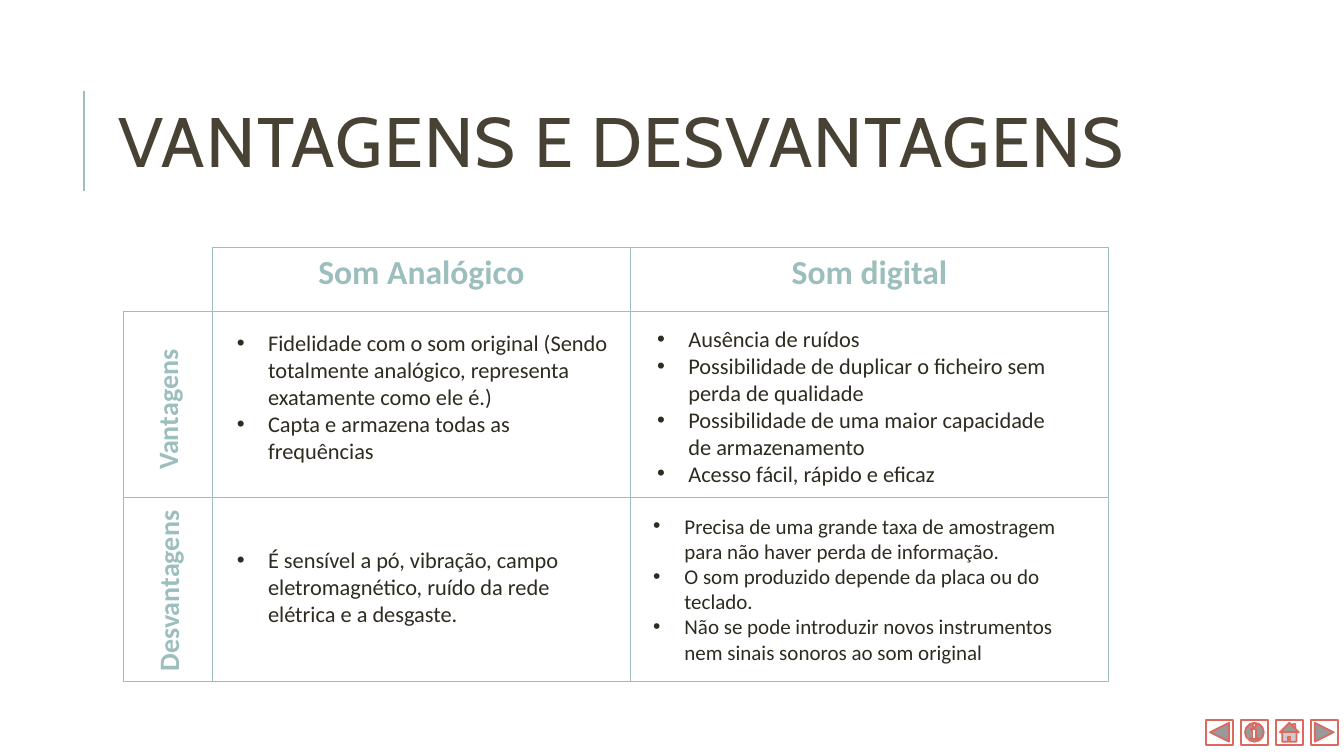
from dataclasses import dataclass

from lxml import etree
from pptx import Presentation
from pptx.dml.color import RGBColor
from pptx.enum.shapes import MSO_CONNECTOR, MSO_SHAPE
from pptx.enum.text import MSO_ANCHOR, MSO_AUTO_SIZE, PP_ALIGN
from pptx.oxml.ns import qn
from pptx.slide import Slide
from pptx.table import Table
from pptx.text.text import TextFrame
from pptx.util import Inches, Length, Pt

STRAIGHT = MSO_CONNECTOR.STRAIGHT
LEFT, CENTER = PP_ALIGN.LEFT, PP_ALIGN.CENTER
TOP, MIDDLE = MSO_ANCHOR.TOP, MSO_ANCHOR.MIDDLE
FIT_SHAPE, FIXED = MSO_AUTO_SIZE.SHAPE_TO_FIT_TEXT, MSO_AUTO_SIZE.NONE
BUTTONS = (
    MSO_SHAPE.ACTION_BUTTON_BACK_OR_PREVIOUS,
    MSO_SHAPE.ACTION_BUTTON_INFORMATION,
    MSO_SHAPE.ACTION_BUTTON_HOME,
    MSO_SHAPE.ACTION_BUTTON_FORWARD_OR_NEXT,
)

TEAL = RGBColor(0x9C, 0xBE, 0xBD)
BROWN = RGBColor(0x47, 0x42, 0x33)
INK = RGBColor(0x2E, 0x2B, 0x21)
CORAL = RGBColor(0xDB, 0x69, 0x5F)
WHITE = RGBColor(0xFF, 0xFF, 0xFF)

SLIDE_WIDTH, SLIDE_HEIGHT = Inches(13.33), Inches(7.5)
BULLET_INDENT = Inches(0.31)

# Grid edges, in percent of the slide's width and height
COLUMN_EDGES = (9.15, 15.83, 46.89, 82.5)
ROW_EDGES = (32.8, 41.2, 65.75, 90.2)


@dataclass(frozen=True)
class Area:
    """Place and size in percent of the slide."""
    left: float
    top: float
    width: float
    height: float

    def lengths(self) -> tuple[Length, Length, Length, Length]:
        return (across(self.left), down(self.top),
                across(self.width), down(self.height))


@dataclass(frozen=True)
class SideLabel:
    text: str
    area: Area


@dataclass(frozen=True)
class BulletList:
    area: Area
    size: int
    items: tuple[str, ...]


HEADERS = ("Som Analógico", "Som digital")
SIDE_LABELS = (
    SideLabel("Vantagens", Area(6, 49.07, 12.9, 5.87)),
    SideLabel("Desvantagens", Area(5.55, 74.8, 13.95, 5.87)),
)
BULLET_LISTS = (
    BulletList(Area(16.88, 42.93, 30, 19.33), 16, (
        "Fidelidade com o som original (Sendo totalmente analógico, "
        "representa exatamente como ele é.)",
        "Capta e armazena todas as frequências",
    )),
    BulletList(Area(48.16, 42.4, 30.68, 22.93), 16, (
        "Ausência de ruídos",
        "Possibilidade de duplicar o ficheiro sem perda de qualidade",
        "Possibilidade de uma maior capacidade de armazenamento",
        "Acesso fácil, rápido e eficaz",
    )),
    BulletList(Area(16.88, 71.6, 30, 12.13), 16, (
        "É sensível a pó, vibração, campo eletromagnético, "
        "ruído da rede elétrica e a desgaste.",
    )),
    BulletList(Area(47.86, 67.2, 33.46, 21.6), 15, (
        "Precisa de uma grande taxa de amostragem para não haver "
        "perda de informação.",
        "O som produzido depende da placa ou do teclado.",
        "Não se pode introduzir novos instrumentos nem sinais sonoros "
        "ao som original",
    )),
)


def across(share: float) -> Length:
    return Length(round(SLIDE_WIDTH * share / 100))


def down(share: float) -> Length:
    return Length(round(SLIDE_HEIGHT * share / 100))


def write(frame: TextFrame, *lines: str, size: float, color: RGBColor,
          font: str = "Calibri", bold: bool = False, align: PP_ALIGN = LEFT,
          line_spacing: float = 1.0, tracking: float = 0,
          bullets: bool = False) -> None:
    for index, line in enumerate(lines):
        para = frame.add_paragraph() if index else frame.paragraphs[0]
        para.alignment = align
        para.line_spacing = line_spacing
        span = para.add_run()
        span.text = line
        span.font.name, span.font.size = font, Pt(size)
        span.font.bold, span.font.color.rgb = bold, color
        if tracking:
            span.font._element.set("spc", str(round(tracking * 100)))
        if bullets:
            properties = para._p.get_or_add_pPr()
            properties.set("marL", str(BULLET_INDENT))
            properties.set("indent", str(-BULLET_INDENT))
            etree.SubElement(properties, qn("a:buFont"), typeface="Arial")
            etree.SubElement(properties, qn("a:buChar"), char="•")


def add_box(page: Slide, area: Area, anchor: MSO_ANCHOR = TOP,
            fit: MSO_AUTO_SIZE = FIT_SHAPE, rotation: float = 0) -> TextFrame:
    box = page.shapes.add_textbox(*area.lengths())
    box.rotation = rotation
    frame = box.text_frame
    frame.word_wrap = True
    frame.auto_size = fit
    frame.vertical_anchor = anchor
    return frame


def add_grid(page: Slide, column_edges: tuple[float, ...],
             row_edges: tuple[float, ...]) -> Table:
    """Add an unfilled table with thin teal rules between the given edges."""
    widths = [end - start for start, end in zip(column_edges, column_edges[1:])]
    heights = [end - start for start, end in zip(row_edges, row_edges[1:])]
    area = Area(column_edges[0], row_edges[0], sum(widths), sum(heights))
    table = page.shapes.add_table(len(heights), len(widths),
                                  *area.lengths()).table
    table.first_row = table.horz_banding = False
    for column, width in zip(table.columns, widths):
        column.width = across(width)
    for row, height in zip(table.rows, heights):
        row.height = down(height)
    for cell in table.iter_cells():
        properties = cell._tc.get_or_add_tcPr()
        for side in ("a:lnL", "a:lnR", "a:lnT", "a:lnB"):
            border = etree.SubElement(properties, qn(side), w=str(Pt(0.75)))
            fill = etree.SubElement(border, qn("a:solidFill"))
            etree.SubElement(fill, qn("a:srgbClr"), val=str(TEAL))
        cell.fill.background()
    return table


def add_title(page: Slide) -> None:
    rule = page.shapes.add_connector(STRAIGHT, across(6.23), down(25.33),
                                     across(6.23), down(12))
    rule.line.color.rgb, rule.line.width = TEAL, Pt(1.5)
    etree.SubElement(rule._element.spPr, qn("a:effectLst"))
    frame = add_box(page, Area(8.1, 8.53, 79.74, 21.87), MIDDLE, FIXED)
    write(frame, "VANTAGENS E DESVANTAGENS", size=50, color=BROWN,
          font="Cabin", line_spacing=0.8, tracking=1)


def add_buttons(page: Slide) -> None:
    for index, kind in enumerate(BUTTONS):
        area = Area(89.72 + 2.6 * index, 95.2, 2.03, 3.33)
        button = page.shapes.add_shape(kind, *area.lengths())
        button.shadow.inherit = False
        button.fill.solid()
        button.fill.fore_color.rgb = WHITE
        button.line.color.rgb, button.line.width = CORAL, Pt(1.25)


def main() -> None:
    deck = Presentation()
    deck.slide_width, deck.slide_height = SLIDE_WIDTH, SLIDE_HEIGHT
    page = deck.slides.add_slide(deck.slide_layouts[6])
    add_title(page)

    # Comparison table and its side column
    comparison = add_grid(page, COLUMN_EDGES[1:], ROW_EDGES)
    for index, header in enumerate(HEADERS):
        write(comparison.cell(0, index).text_frame, header, size=24,
              color=TEAL, bold=True, align=CENTER)
    add_buttons(page)
    add_grid(page, COLUMN_EDGES[:2], ROW_EDGES[1:])

    # Text laid over the cells
    for label in SIDE_LABELS:
        write(add_box(page, label.area, rotation=270), label.text,
              size=20, color=TEAL, bold=True)
    for group in BULLET_LISTS:
        write(add_box(page, group.area), *group.items,
              size=group.size, color=INK, bullets=True)
    deck.save("out.pptx")


if __name__ == "__main__":
    main()
